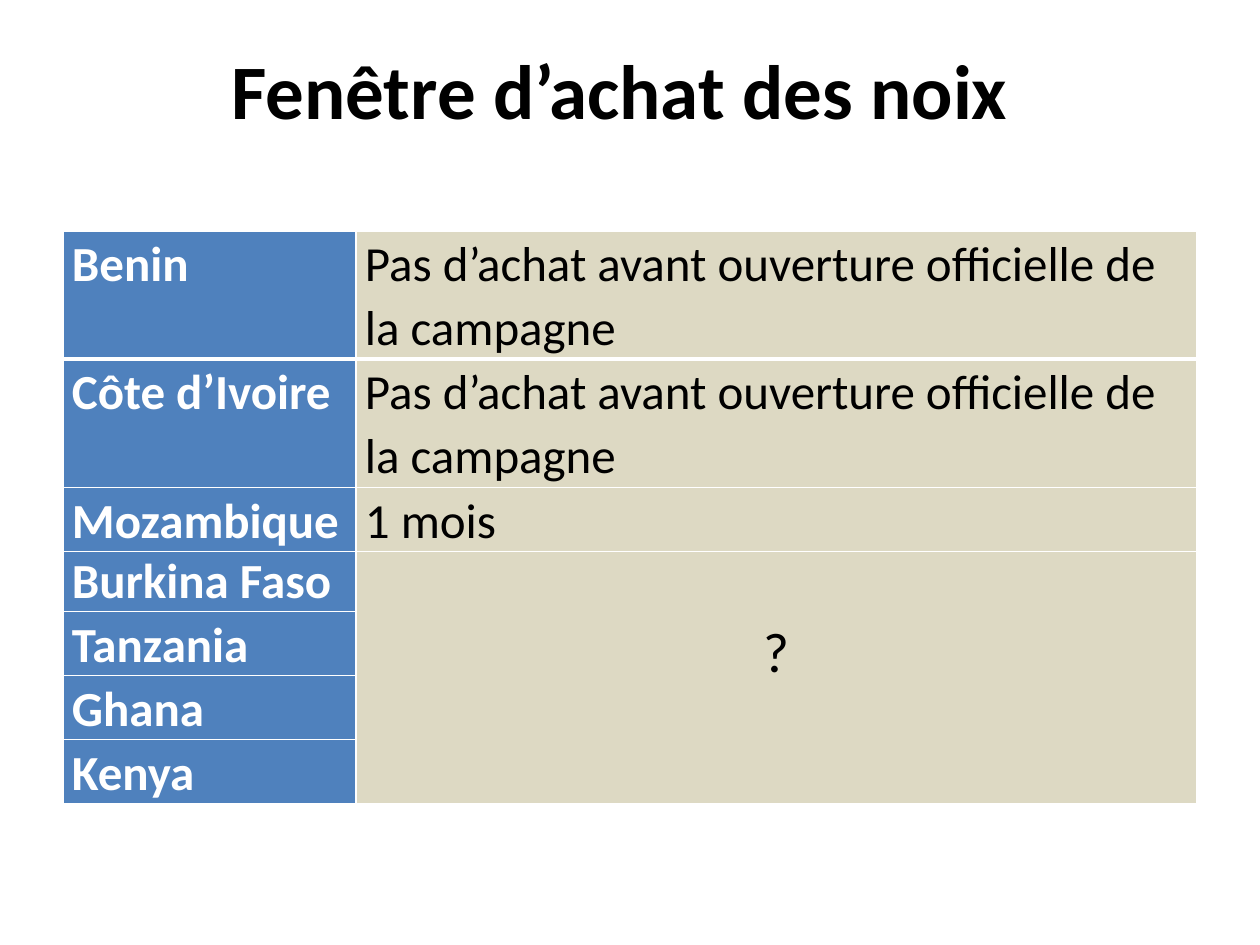
from lxml.etree import SubElement
from pptx import Presentation
from pptx.dml.color import RGBColor
from pptx.enum.text import MSO_ANCHOR, PP_ALIGN
from pptx.oxml.ns import qn
from pptx.util import Pt

PX = 914400 // 126
FONT = "Calibri"
WHITE, BLACK, BLUE, BEIGE = "FFFFFF", "000000", "4F81BD", "DDD9C3"

COLUMNS = [293, 841]
OPENING = "Pas d’achat avant ouverture officielle de la campagne"
# Country, purchase window, row height, line spacing
ROWS = [
    ("Benin", OPENING, 128, 1.07),
    ("Côte d’Ivoire", OPENING, 128, 1.07),
    ("Mozambique", "1 mois", 64, 1.07),
    ("Burkina Faso", None, 60, 1.0),
    ("Tanzania", None, 64, 1.07),
    ("Ghana", None, 64, 1.07),
    ("Kenya", None, 64, 1.07),
]
FIRST_UNKNOWN = 3


def px(n):
    return n * PX


def rgb(value):
    return RGBColor.from_string(value)


def set_font(p, size, color, bold):
    p.font.name = FONT
    p.font.size = Pt(size)
    p.font.bold = bold
    p.font.color.rgb = rgb(color)


def add_title(slide, text):
    sp = slide.shapes.title
    sp.left, sp.top, sp.width, sp.height = px(53), px(10), px(1134), px(158)
    tf = sp.text_frame
    tf.text = text
    tf.vertical_anchor = MSO_ANCHOR.MIDDLE
    p = tf.paragraphs[0]
    p.alignment = PP_ALIGN.CENTER
    set_font(p, 44, BLACK, True)


def set_borders(cell, top=1, bottom=1):
    """Draw white borders; must run before the cell gets its fill."""
    tc_pr = cell._tc.get_or_add_tcPr()
    for side, width in (("L", 1), ("R", 1), ("T", top), ("B", bottom)):
        ln = SubElement(tc_pr, qn(f"a:ln{side}"), w=str(Pt(width)))
        fill = SubElement(ln, qn("a:solidFill"))
        SubElement(fill, qn("a:srgbClr"), val=WHITE)


def style_cell(cell, fill, row):
    cell.margin_left = cell.margin_right = px(9)
    cell.margin_top = cell.margin_bottom = 0
    # A thicker rule closes the first row
    set_borders(cell, top=3 if row == 1 else 1, bottom=3 if row == 0 else 1)
    cell.fill.solid()
    cell.fill.fore_color.rgb = rgb(fill)


def write_cell(cell, text, size, color, bold, spacing=1.0):
    cell.text = text
    p = cell.text_frame.paragraphs[0]
    p.line_spacing = spacing
    set_font(p, size, color, bold)
    return p


def add_window_table(slide):
    height = sum(row[2] for row in ROWS)
    table = slide.shapes.add_table(len(ROWS), len(COLUMNS), px(63), px(231),
                                   px(sum(COLUMNS)), px(height)).table
    table.first_row = table.horz_banding = False
    for column, width in zip(table.columns, COLUMNS):
        column.width = px(width)

    for i, (country, window, row_height, spacing) in enumerate(ROWS):
        table.rows[i].height = px(row_height)
        name, value = table.cell(i, 0), table.cell(i, 1)
        style_cell(name, BLUE, i)
        style_cell(value, BEIGE, i)
        write_cell(name, country, 28, WHITE, True, spacing)
        if window:
            write_cell(value, window, 28, BLACK, False, spacing)

    # One shared cell for the countries without a known window
    unknown = table.cell(FIRST_UNKNOWN, 1)
    unknown.merge(table.cell(len(ROWS) - 1, 1))
    unknown.margin_top = px(68)
    p = write_cell(unknown, "?", 32, BLACK, False)
    p.alignment = PP_ALIGN.CENTER


def main():
    prs = Presentation()
    prs.slide_width, prs.slide_height = px(1260), px(945)
    slide = prs.slides.add_slide(prs.slide_layouts[5])
    add_title(slide, "Fenêtre d’achat des noix")
    add_window_table(slide)
    prs.save("out.pptx")


if __name__ == "__main__":
    main()
